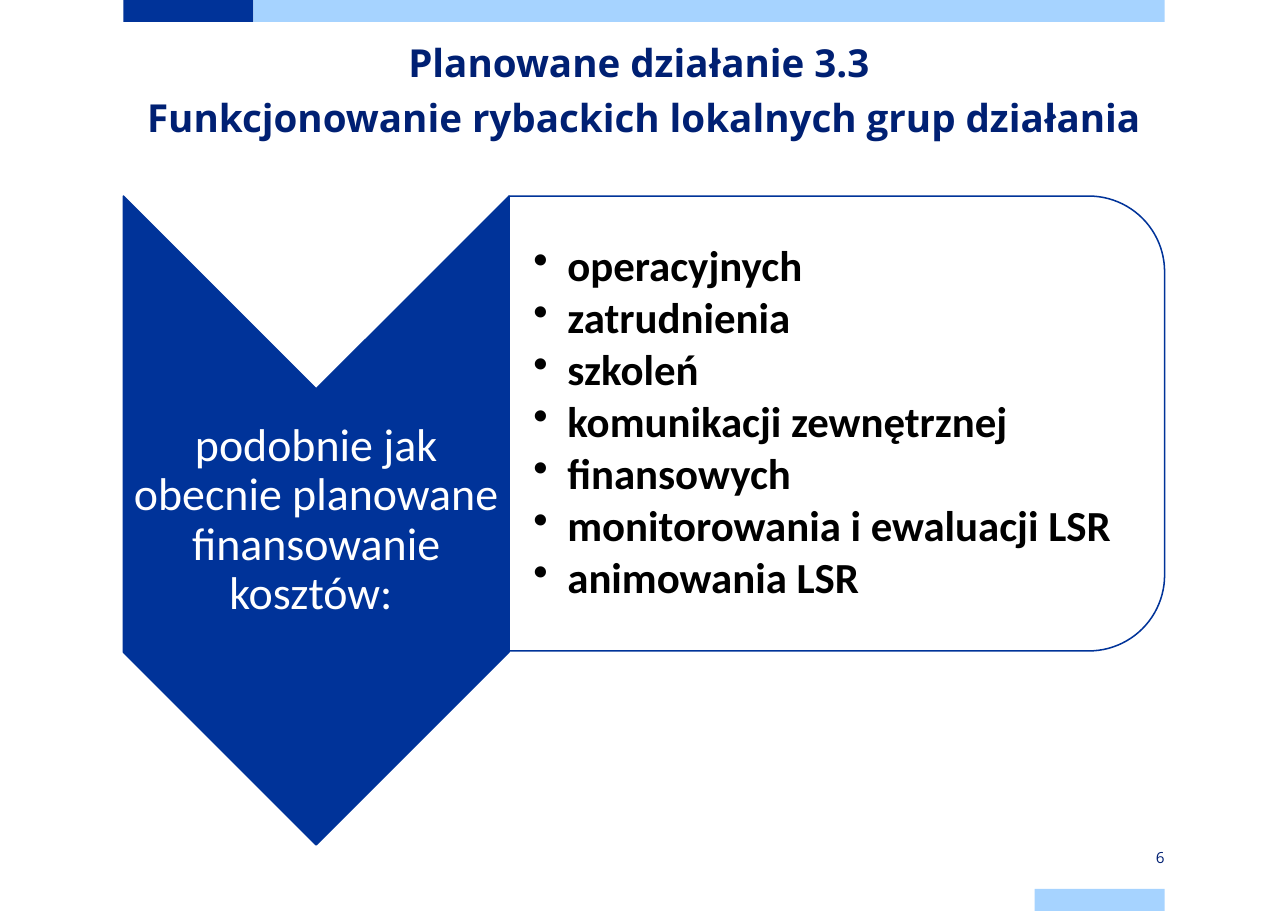
from pptx import Presentation
from pptx.util import Inches, Pt
from pptx.dml.color import RGBColor
from pptx.enum.shapes import MSO_SHAPE as Form
from pptx.enum.text import PP_ALIGN as Align, MSO_ANCHOR as Anchor
from pptx.oxml.ns import qn
from lxml.etree import SubElement

COLORS = {"navy": "002073", "blue": "003399", "sky": "A6D3FF",
          "white": "FFFFFF", "black": "000000"}
COSTS = ["operacyjnych", "zatrudnienia", "szkoleń", "komunikacji zewnętrznej",
         "finansowych", "monitorowania i ewaluacji LSR", "animowania LSR"]
LEFT, WIDTH = 1.12, 9.45
TAB, BAR = 1.18, 0.2


def color(name):
    return RGBColor.from_string(COLORS[name])


def add_form(slide, form, box, fill, line=None, turn=0):
    shape = slide.shapes.add_shape(form, *map(Inches, box))
    shape.shadow.inherit = False
    shape.rotation = turn
    shape.fill.solid()
    shape.fill.fore_color.rgb = color(fill)
    if line:
        shape.line.color.rgb = color(line)
        shape.line.width = Pt(1)
    else:
        shape.line.fill.background()
    return shape


def add_turned(slide, form, box, fill, line):
    """Place a shape turned by 90 degrees so that it fills the box."""
    x, y, w, h = box
    frame = (x + (w - h) / 2, y + (h - w) / 2, h, w)
    return add_form(slide, form, frame, fill, line, 90)


def add_bullet(para, indent):
    props = para._p.get_or_add_pPr()
    props.set("marL", str(Inches(indent)))
    props.set("indent", str(-Inches(indent)))
    SubElement(props, qn("a:buChar")).set("char", "•")


def add_text(slide, box, lines, size, ink, font="Calibri", bold=False,
             align=Align.LEFT, anchor=Anchor.MIDDLE, inset=(0, 0, 0, 0),
             pitch=None, gap=0, indent=0):
    frame = slide.shapes.add_textbox(*map(Inches, box)).text_frame
    frame.word_wrap = True
    frame.vertical_anchor = anchor
    (frame.margin_left, frame.margin_top,
     frame.margin_right, frame.margin_bottom) = map(Inches, inset)
    for i, line in enumerate(lines):
        para = frame.add_paragraph() if i else frame.paragraphs[0]
        para.text = line
        para.alignment = align
        if pitch:
            para.line_spacing = pitch
        para.space_after = Pt(gap)
        if indent:
            add_bullet(para, indent)
        para.font.name, para.font.size = font, Pt(size)
        para.font.bold = bold
        para.font.color.rgb = color(ink)


def draw_bars(slide, x, w, high):
    add_form(slide, Form.RECTANGLE, (x, 0, TAB, BAR), "blue")
    add_form(slide, Form.RECTANGLE, (x + TAB, 0, w - TAB, BAR), "sky")
    add_form(slide, Form.RECTANGLE, (x + w - TAB, high - BAR, TAB, BAR), "sky")


def draw_title(slide, box):
    add_text(slide, box,
             ["Planowane działanie 3.3 ",
              "Funkcjonowanie rybackich lokalnych grup działania"],
             25.2, "navy", "Open Sans", True, Align.CENTER, Anchor.TOP,
             pitch=Pt(36))


def draw_costs(slide, box):
    x, y, w, h = box
    side, body = 3.5, 4.13
    tip = side / 2

    # Arrow with the lead-in
    add_turned(slide, Form.CHEVRON, (x, y, side, h), "blue", "blue")
    add_text(slide, (x, y + tip, side, h - 2 * tip),
             ["podobnie jak obecnie planowane finansowanie kosztów: "],
             30, "white", align=Align.CENTER, inset=(0.02,) * 4, pitch=0.9)

    # Panel with the list of costs
    add_turned(slide, Form.ROUND_2_SAME_RECTANGLE,
               (x + side, y, w - side, body), "white", "blue")
    add_text(slide, (x + side, y + 0.2, w - side - 0.2, body - 0.4), COSTS,
             28, "black", bold=True, inset=(0.22, 0.02, 0.02, 0.02),
             pitch=0.9, gap=3.75, indent=0.31)


def draw_number(slide, box):
    add_text(slide, box, ["6"], 10, "navy", "Open Sans", align=Align.RIGHT,
             inset=(0, 0.08, 0, 0.08))


def main():
    deck = Presentation()
    deck.slide_width, deck.slide_height = Inches(11.69), Inches(8.27)
    slide = deck.slides.add_slide(deck.slide_layouts[6])
    draw_bars(slide, LEFT, WIDTH, 8.27)
    draw_title(slide, (LEFT, 0.27, WIDTH, 1.1))
    draw_costs(slide, (LEFT, 1.78, WIDTH, 5.89))
    draw_number(slide, (LEFT + WIDTH - TAB, 7.68, TAB, BAR))
    deck.save("out.pptx")


if __name__ == "__main__":
    main()
